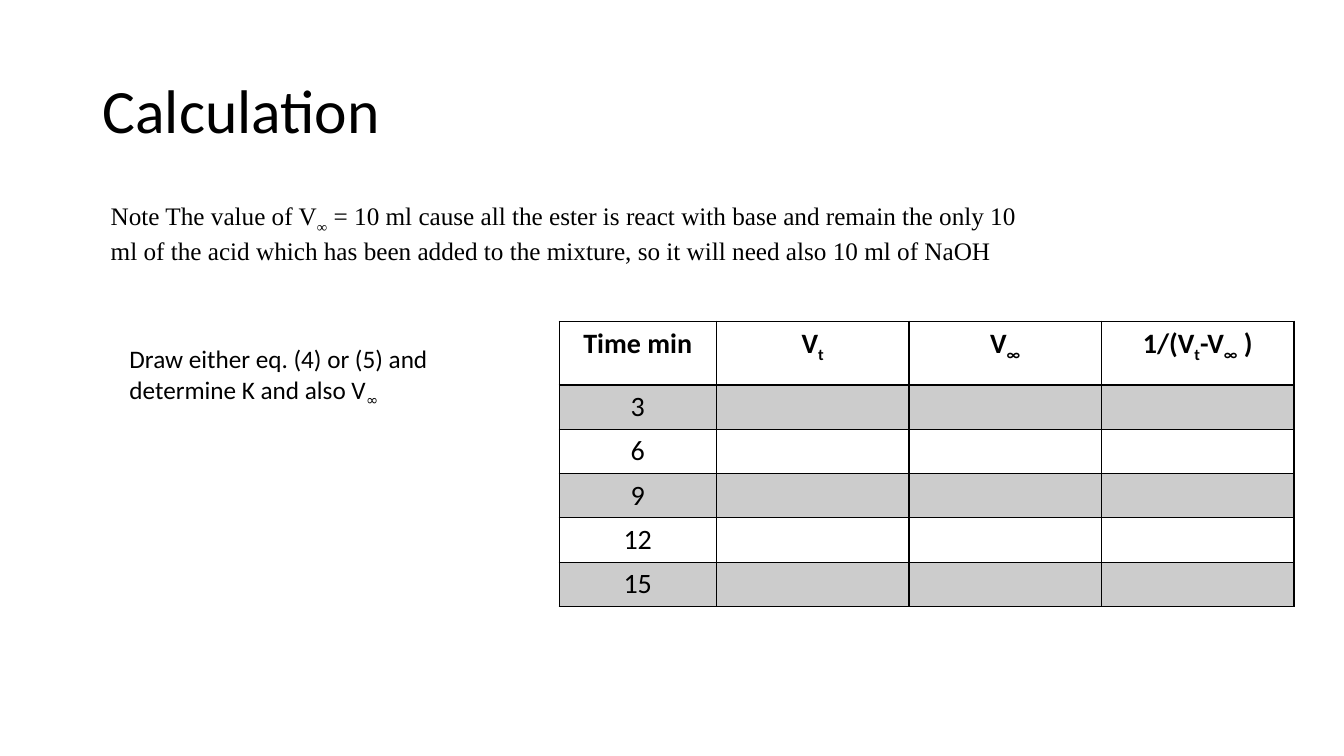
from lxml.etree import SubElement
from pptx import Presentation
from pptx.dml.color import RGBColor
from pptx.enum.text import MSO_ANCHOR as Anchor, PP_ALIGN as Align
from pptx.oxml.ns import qn
from pptx.util import Inches, Pt

COLORS = {"ink": "000000", "paper": "FFFFFF", "band": "CCCCCC"}
WIDTH, HEIGHT = Inches(13.33), Inches(7.5)
BODY_FONT, NOTE_FONT, SYMBOL_FONT = "Calibri", "Times New Roman", "Comic Neue"

HEADERS = ["Time min", "V|t", "V|∞", "1/(V|t|-V|∞| )"]
TIMES = [3, 6, 9, 12, 15]
COL_WIDTHS = [1.56] + [1.91] * 3
ROW_HEIGHTS = [0.63] + [0.44] * len(TIMES)


def rgb(name):
    return RGBColor.from_string(COLORS[name])


def write(p, text, size, font=BODY_FONT, bold=False, sub_font=None):
    """Fill a paragraph; every second part between bars is a subscript."""
    for i, part in enumerate(text.split("|")):
        r = p.add_run()
        r.text = part
        if i % 2:
            r._r.get_or_add_rPr().set("baseline", "-25000")
            if sub_font:
                r.font.name = sub_font
    p.font.size, p.font.bold = Pt(size), bold
    p.font.color.rgb = rgb("ink")
    if not sub_font:
        p.font.name = font
    else:
        p.runs[0].font.name = font


def add_text(s, box, text, size, anchor=Anchor.TOP, spacing=None, **style):
    """Place a text box given as shares of the slide: left, top, width, height."""
    x, y, w, h = box
    sp = s.shapes.add_textbox(int(x * WIDTH), int(y * HEIGHT),
                              int(w * WIDTH), int(h * HEIGHT))
    tf = sp.text_frame
    tf.word_wrap = True
    tf.vertical_anchor = anchor
    p = tf.paragraphs[0]
    if spacing:
        p.line_spacing = spacing
    write(p, text, size, **style)


def add_borders(cell, bottom):
    tcPr = cell._tc.get_or_add_tcPr()
    for side, width in (("L", 1), ("R", 1), ("T", 1), ("B", bottom)):
        ln = SubElement(tcPr, qn(f"a:ln{side}"), w=str(Pt(width)))
        fill = SubElement(ln, qn("a:solidFill"))
        SubElement(fill, qn("a:srgbClr"), val=COLORS["ink"])


def add_readings(s, x, y):
    """Draw the table of readings, with only the times filled in."""
    rows = [HEADERS] + [[str(t), "", "", ""] for t in TIMES]
    frame = s.shapes.add_table(len(rows), len(HEADERS),
                               int(x * WIDTH), int(y * HEIGHT),
                               Inches(sum(COL_WIDTHS)), Inches(sum(ROW_HEIGHTS)))
    table = frame.table
    table.first_row = table.horz_banding = False
    for col, width in zip(table.columns, COL_WIDTHS):
        col.width = Inches(width)
    for i, (row, height) in enumerate(zip(table.rows, ROW_HEIGHTS)):
        row.height = Inches(height)
        for cell, text in zip(row.cells, rows[i]):
            add_borders(cell, bottom=1 if i else 2)
            cell.fill.solid()
            cell.fill.fore_color.rgb = rgb("band" if i % 2 else "paper")
            cell.margin_left = cell.margin_right = Inches(0.2)
            p = cell.text_frame.paragraphs[0]
            p.alignment = Align.CENTER
            if text:
                write(p, text, 20, bold=i == 0)


def main():
    prs = Presentation()
    prs.slide_width, prs.slide_height = WIDTH, HEIGHT
    s = prs.slides.add_slide(prs.slide_layouts[6])
    add_text(s, (0.069, 0.053, 0.863, 0.193), "Calculation", 44,
             anchor=Anchor.MIDDLE, spacing=0.9)
    add_readings(s, 0.416, 0.425)
    add_text(s, (0.075, 0.259, 0.709, 0.095),
             "Note The value of V|∞| = 10 ml cause all the ester is react with "
             "base and remain the only 10 ml of the acid which has been added to "
             "the mixture, so it will need also 10 ml of NaOH",
             18, font=NOTE_FONT)
    add_text(s, (0.089, 0.448, 0.283, 0.095),
             "Draw either eq. (4) or (5) and determine K and also V|∞",
             18, sub_font=SYMBOL_FONT)
    prs.save("out.pptx")


if __name__ == "__main__":
    main()
